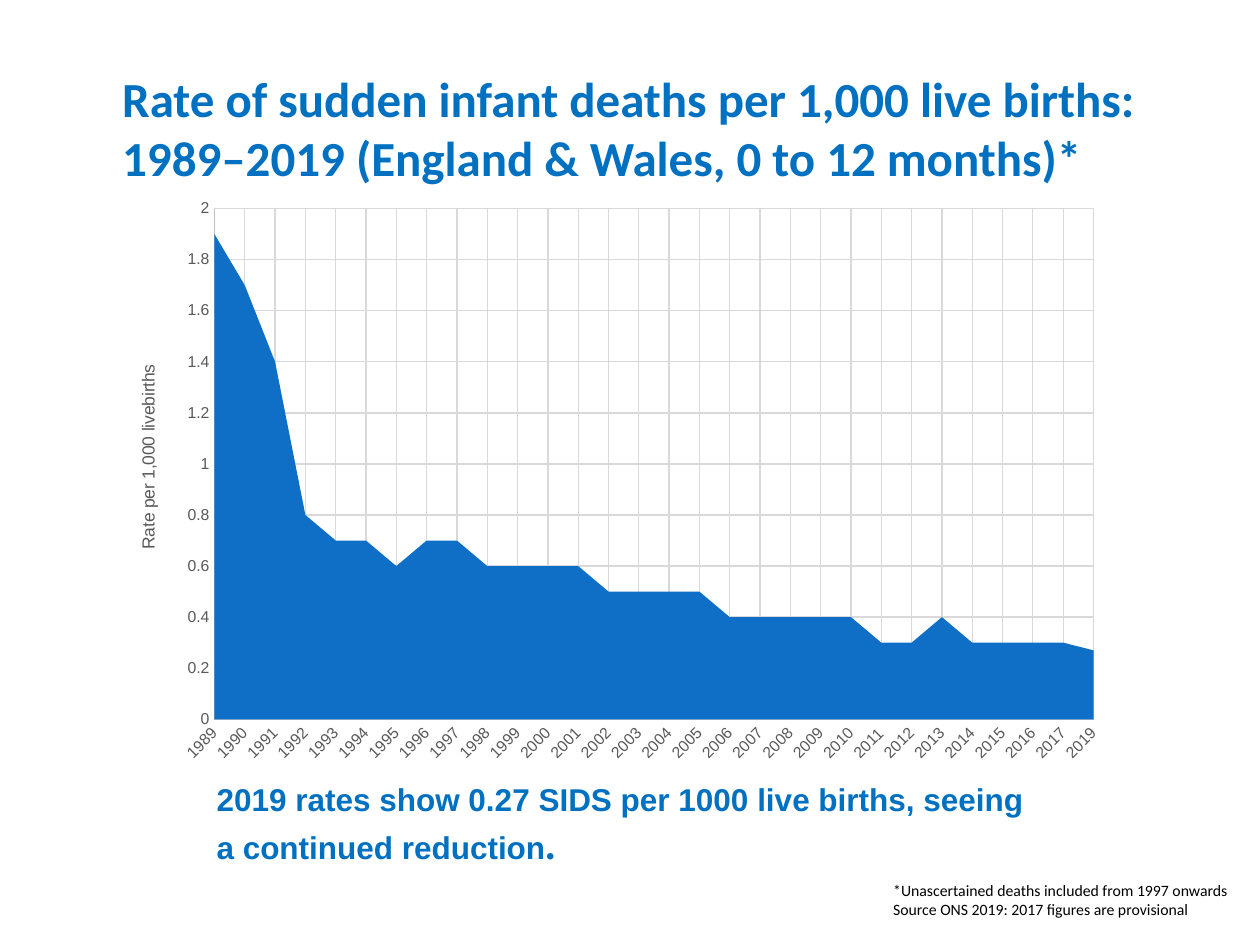
from lxml import etree
from pptx import Presentation
from pptx.chart.data import CategoryChartData
from pptx.dml.color import RGBColor
from pptx.enum.chart import XL_CHART_TYPE, XL_TICK_MARK
from pptx.enum.text import MSO_ANCHOR, PP_ALIGN
from pptx.oxml.ns import qn
from pptx.util import Inches, Pt

AREA = XL_CHART_TYPE.AREA
NO_TICKS = XL_TICK_MARK.NONE
BLUE, GREY, BLACK = "0070C0", "595959", "000000"

# Content
TITLE = ("Rate of sudden infant deaths per 1,000 live births: "
         "1989–2019 (England & Wales, 0 to 12 months)*")
CAPTION = "2019 rates show 0.27 SIDS per 1000 live births, seeing a continued reduction"
FOOTNOTES = ["*Unascertained deaths included from 1997 onwards",
             "Source ONS 2019: 2017 figures are provisional"]
AXIS_TITLE = "Rate per 1,000 livebirths"
YEARS = [str(year) for year in range(1989, 2018)] + ["2019"]
RATES = [1.9, 1.7, 1.4, 0.8, 0.7, 0.7, 0.6, 0.7, 0.7, 0.6,
         0.6, 0.6, 0.6, 0.5, 0.5, 0.5, 0.5, 0.4, 0.4, 0.4,
         0.4, 0.4, 0.3, 0.3, 0.4, 0.3, 0.3, 0.3, 0.3, 0.27]


def set_font(font, name, size, color, bold=False):
    font.name, font.size, font.bold = name, Pt(size), bold
    font.color.rgb = RGBColor.from_string(color)


def set_line(line, color):
    line.color.rgb = RGBColor.from_string(color)
    line.width = Pt(0.75)


def add_text(slide, box, lines):
    frame = slide.shapes.add_textbox(*map(Inches, box)).text_frame
    frame.word_wrap = True
    frame.text = "\n".join(lines)
    return frame


def place(layout, **values):
    """Fix a chart part at fractions of the chart area."""
    for child in list(layout):
        layout.remove(child)
    manual = etree.SubElement(layout, qn("c:manualLayout"))
    for tag, value in values.items():
        etree.SubElement(manual, qn("c:" + tag)).set("val", str(value))


prs = Presentation()
prs.slide_width, prs.slide_height = Inches(10), Inches(7.5)
slide = prs.slides.add_slide(prs.slide_layouts[5])

# Title
title = slide.shapes.title
title.left, title.top, title.width, title.height = map(Inches, (0.97, 0.13, 8.07, 1.35))
heading = title.text_frame
heading.text = TITLE
heading.vertical_anchor = MSO_ANCHOR.BOTTOM
heading.margin_left = heading.margin_right = heading.margin_bottom = 0
heading.paragraphs[0].alignment = PP_ALIGN.LEFT
set_font(heading.paragraphs[0].font, "Calibri", 28, BLUE, True)

# Footnotes and caption
for note in add_text(slide, (6.99, 6.94, 3.01, 0.56), FOOTNOTES).paragraphs:
    set_font(note.font, "Calibri", 9, BLACK)
caption = add_text(slide, (1.62, 6.14, 6.75, 0.81), [CAPTION]).paragraphs[0]
full_stop = caption.add_run()
full_stop.text = "."
set_font(caption.runs[0].font, "Arial", 18, BLUE, True)
set_font(full_stop.font, "TeX Gyre Pagella", 24, BLUE, True)

# Area chart
data = CategoryChartData()
data.categories = YEARS
data.add_series("Series 1", RATES)
chart = slide.shapes.add_chart(AREA, *map(Inches, (0.9, 1.47, 8.02, 4.66)), data).chart
chart.has_legend = chart.has_title = False
set_font(chart.font, "TeX Gyre Pagella", 10, BLACK)
plot = chart.plots[0]
plot.vary_by_categories = False
fill = plot.series[0].format.fill
fill.solid()
fill.fore_color.rgb = RGBColor.from_string("0F6FC6")

# Axes
years_axis, rate_axis = chart.category_axis, chart.value_axis
for axis in (years_axis, rate_axis):
    axis.major_tick_mark = axis.minor_tick_mark = NO_TICKS
    axis.has_major_gridlines = True
    set_line(axis.major_gridlines.format.line, "D9D9D9")
    set_line(axis.format.line, "BFBFBF")
    set_font(axis.tick_labels.font, "Arial", 9, GREY)
years_axis._element.find(qn("c:txPr")).find(qn("a:bodyPr")).set("rot", "-2700000")
rate_axis.minimum_scale, rate_axis.maximum_scale, rate_axis.major_unit = 0, 2, 0.2
rate_axis.tick_labels.number_format = "General"
rate_axis.tick_labels.number_format_is_linked = False
rate_axis._element.find(qn("c:crossBetween")).set("val", "midCat")
axis_title = rate_axis.axis_title
axis_title.text_frame.text = AXIS_TITLE
set_font(axis_title.text_frame.paragraphs[0].font, "Arial", 10, GREY)

# Positions inside the chart
title_layout = axis_title._element.find(qn("c:layout"))
if title_layout is None:
    title_layout = etree.Element(qn("c:layout"))
    axis_title._element.find(qn("c:tx")).addnext(title_layout)
place(title_layout, xMode="edge", yMode="edge", x=0.02, y=0.3)
plot_area = chart._chartSpace.chart.plotArea
plot_layout = plot_area.find(qn("c:layout"))
if plot_layout is None:
    plot_layout = etree.Element(qn("c:layout"))
    plot_area.insert(0, plot_layout)
place(plot_layout, layoutTarget="inner", xMode="edge", yMode="edge",
      x=0.1, y=0.04, w=0.87, h=0.87)

prs.save("out.pptx")
